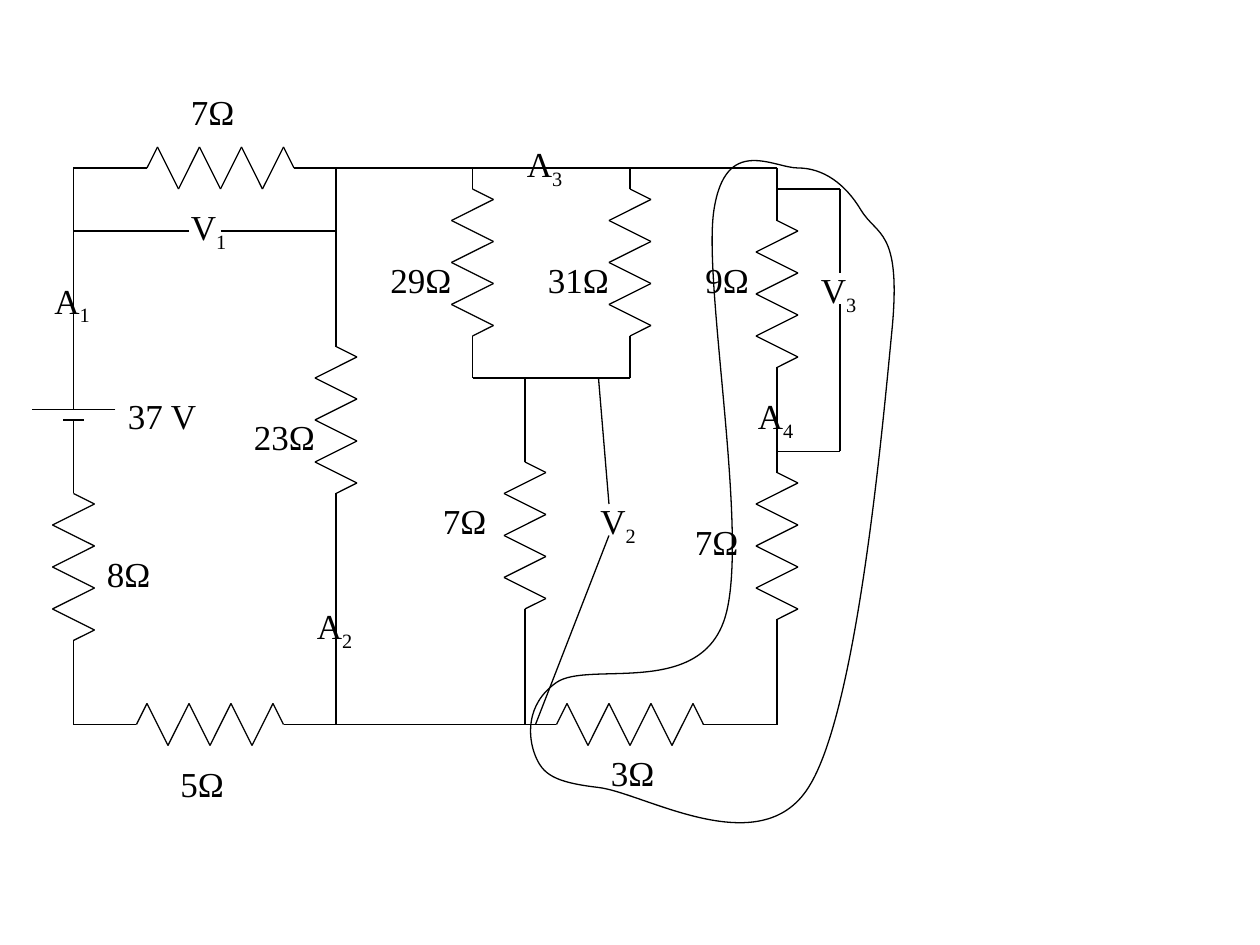
from lxml import etree
from pptx import Presentation
from pptx import util as u
from pptx.dml import color
from pptx.enum import shapes, text
from pptx.oxml import ns

COLORS = {"ink": "000000"}
INK = color.RGBColor.from_string(COLORS["ink"])
GRID = 2.54 / 12  # circuit grid step in cm; all positions count these steps

presentation = Presentation()
presentation.slide_width = u.Cm(25.4)
presentation.slide_height = u.Cm(19.05)
slide = presentation.slides.add_slide(presentation.slide_layouts[6])


def grid(steps):
    return u.Cm(steps * GRID)


def add_wire(start, end):
    wire = slide.shapes.add_connector(
        shapes.MSO_CONNECTOR.STRAIGHT, *map(grid, (*start, *end)))
    wire.line.color.rgb = INK
    wire.line.width = u.Pt(0.75)
    etree.SubElement(wire._element.spPr, ns.qn("a:effectLst"))


wires = [
    # battery branch
    ((7, 16), (7, 39)), ((11, 39), (3, 39)), ((8, 40), (6, 40)),
    ((7, 40), (7, 47)), ((7, 61), (7, 69)),
    # bottom and top rails
    ((7, 69), (13, 69)), ((27, 69), (51, 69)), ((51, 69), (53, 69)),
    ((67, 69), (74, 69)), ((7, 16), (14, 16)), ((28, 16), (74, 16)),
    # inner branches
    ((32, 16), (32, 33)), ((32, 47), (32, 69)),
    ((45, 16), (45, 18)), ((45, 32), (45, 36)),
    ((60, 16), (60, 18)), ((60, 32), (60, 36)), ((45, 36), (60, 36)),
    ((50, 36), (50, 44)), ((50, 58), (50, 69)),
    # right branch
    ((74, 16), (74, 21)), ((74, 35), (74, 45)), ((74, 59), (74, 69)),
    # voltmeter leads
    ((21, 22), (32, 22)), ((18, 22), (7, 22)),
    ((57, 36), (58, 48)), ((58, 51), (51, 69)),
    ((74, 18), (80, 18)), ((74, 43), (80, 43)),
    ((80, 43), (80, 29)), ((80, 26), (80, 18)),
]
for start, end in wires:
    add_wire(start, end)

# Each zigzag is (distance along, offset across) from the resistor's start
zigzag = [(0, 0)] + [(step, 2 if step % 4 == 1 else -2)
                     for step in range(1, 14, 2)] + [(14, 0)]
vertical_resistors = [(7, 47), (32, 33), (45, 18), (60, 18),
                      (50, 44), (74, 21), (74, 45)]
horizontal_resistors = [(13, 69), (53, 69), (14, 16)]
outlines = [[(x + across, y + along) for along, across in zigzag]
            for x, y in vertical_resistors]
outlines += [[(x + along, y - across) for along, across in zigzag]
             for x, y in horizontal_resistors]
for outline in outlines:
    for start, end in zip(outline, outline[1:]):
        add_wire(start, end)

# Base text, subscript, left, top
labels = [
    ("37 V", "", 11, 37), ("8Ω", "", 9, 52), ("A", "1", 4, 26),
    ("5Ω", "", 16, 72), ("7Ω", "", 17, 8), ("23Ω", "", 23, 39),
    ("29Ω", "", 36, 24), ("31Ω", "", 51, 24), ("7Ω", "", 41, 47),
    ("3Ω", "", 57, 71), ("7Ω", "", 65, 49), ("9Ω", "", 66, 24),
    ("A", "3", 49, 13), ("A", "2", 29, 57), ("A", "4", 71, 37),
    ("V", "1", 17, 19), ("V", "2", 56, 47), ("V", "3", 77, 25),
]
label_widths = {1: 1.24, 2: 1.4, 3: 1.75, 4: 1.9}
for base, subscript, left, top in labels:
    label = slide.shapes.add_textbox(
        grid(left), grid(top), u.Cm(label_widths[len(base)]), u.Cm(1.09))
    label.text_frame.word_wrap = False
    label.text_frame.auto_size = text.MSO_AUTO_SIZE.SHAPE_TO_FIT_TEXT
    paragraph = label.text_frame.paragraphs[0]
    paragraph.text = base
    if subscript:
        run = paragraph.add_run()
        run.text = subscript
        run.font._element.set("baseline", "-25000")
    for run in paragraph.runs:
        run.font.name = "Times New Roman"
        run.font.size = u.Pt(20)
        run.font.color.rgb = INK

# Loop around the right branch: a start, then two control points and an end per curve
loop_start = (82, 20)
loop_points = [
    (80.5, 17.5), (78.4, 16), (76, 16),
    (73.7, 16), (69.1, 12.8), (68, 20),
    (66.9, 27.1), (71.5, 51.5), (69, 59),
    (66.5, 66.5), (56, 62.9), (53, 65),
    (50, 67.1), (50.3, 70.3), (51, 72),
    (51.7, 73.7), (52.7, 74.5), (57, 75),
    (61.3, 75.5), (72.4, 82.3), (77, 75),
    (81.7, 67.7), (84.1, 40.2), (85, 31),
    (85.8, 21.8), (83.5, 22.5), (82, 20),
]
builder = slide.shapes.build_freeform(*map(grid, loop_start))
builder.add_line_segments([(grid(x), grid(y)) for x, y in loop_points], close=True)
loop = builder.convert_to_shape()
loop.shadow.inherit = False
loop.fill.background()
loop.line.color.rgb = INK
loop.line.width = u.Pt(0.75)
segments = list(loop._element.iter(ns.qn("a:lnTo")))
for first in range(0, len(segments), 3):
    curve = etree.Element(ns.qn("a:cubicBezTo"))
    segments[first].addprevious(curve)
    for segment in segments[first:first + 3]:
        curve.append(segment[0])
        segment.getparent().remove(segment)

presentation.save("out.pptx")
